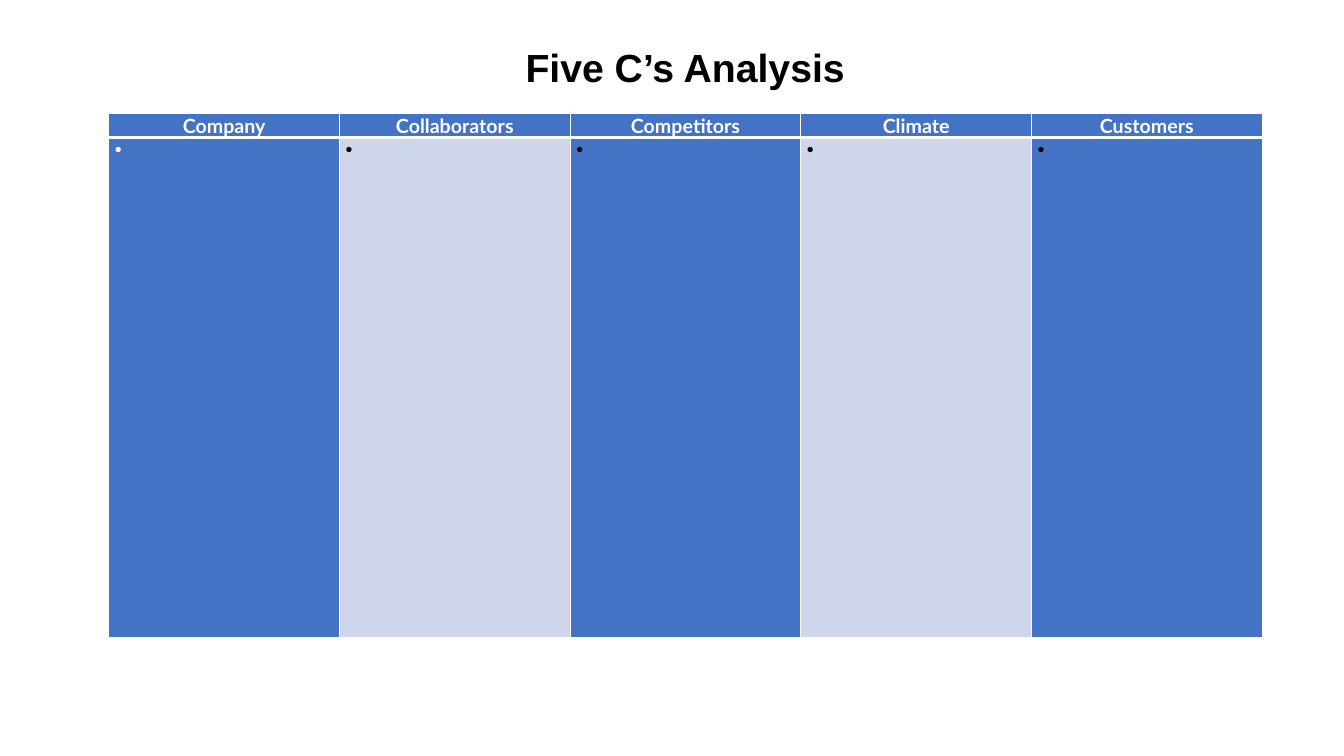
import dataclasses

import pptx
import pptx.dml.color
import pptx.enum.text
import pptx.oxml
import pptx.oxml.ns
import pptx.util

Inches = pptx.util.Inches


@dataclasses.dataclass(frozen=True)
class Theme:
    """Colours, fonts and type sizes of the slide."""
    blue: str = "4472C4"
    pale: str = "CFD5EA"
    white: str = "FFFFFF"
    black: str = "000000"
    title_font: str = "Arial"
    table_font: str = "Lato"
    title_size: int = 28
    table_size: int = 14


THEME = Theme()
HEADINGS = ["Company", "Collaborators", "Competitors", "Climate", "Customers"]


def make_element(markup):
    """Parse drawing markup with the a: namespace declared on its root."""
    tag, rest = markup.split(" ", 1)
    return pptx.oxml.parse_xml(f"{tag} {pptx.oxml.ns.nsdecls('a')} {rest}")


def write_text(para, text, *, font, size, color, bold=False, align=None, before=None):
    """Write one formatted span into a paragraph."""
    para.alignment = align
    if before is not None:
        para.space_before = pptx.util.Pt(before)
    span = para.add_run()
    span.text = text
    span.font.name = font
    span.font.size = pptx.util.Pt(size)
    span.font.bold = bold
    span.font.color.rgb = pptx.dml.color.RGBColor.from_string(color)


def add_bullet(para):
    """Give a paragraph a round bullet with a hanging indent."""
    properties = para._p.get_or_add_pPr()
    properties.set("marL", str(Inches(0.19)))
    properties.set("indent", str(Inches(-0.19)))
    properties.append(make_element('<a:buFont typeface="Arial"/>'))
    properties.append(make_element('<a:buChar char="•"/>'))


def style_cell(cell, fill, top, bottom):
    """Set the margins, fill and white borders of a cell."""
    cell.margin_left = cell.margin_right = Inches(0.06)
    cell.margin_top = cell.margin_bottom = 0
    cell.fill.solid()
    cell.fill.fore_color.rgb = pptx.dml.color.RGBColor.from_string(fill)
    properties = cell._tc.get_or_add_tcPr()
    widths = {"lnL": 1, "lnR": 1, "lnT": top, "lnB": bottom}
    for index, (side, width) in enumerate(widths.items()):
        properties.insert(index, make_element(
            f'<a:{side} w="{pptx.util.Pt(width)}"><a:solidFill>'
            f'<a:srgbClr val="{THEME.white}"/></a:solidFill></a:{side}>'))


def add_title(page, text):
    """Add the centred slide title."""
    box = page.shapes.add_textbox(Inches(2.27), Inches(0.38), Inches(9.05), Inches(0.57))
    box.text_frame.word_wrap = True
    write_text(box.text_frame.paragraphs[0], text, font=THEME.title_font,
               size=THEME.title_size, color=THEME.black, bold=True,
               align=pptx.enum.text.PP_ALIGN.CENTER)


def add_analysis_table(page, headings):
    """Add a table with one headed, bulleted column per heading."""
    table = page.shapes.add_table(2, len(headings), Inches(1.08), Inches(1.13),
                                  Inches(11.44), Inches(5.19)).table
    table.rows[0].height = Inches(0.23)
    table.rows[1].height = Inches(4.96)
    for index, heading in enumerate(headings):
        header, body = table.cell(0, index), table.cell(1, index)
        style_cell(header, THEME.blue, top=1, bottom=3)
        write_text(header.text_frame.paragraphs[0], heading, font=THEME.table_font,
                   size=THEME.table_size, color=THEME.white, bold=True,
                   align=pptx.enum.text.PP_ALIGN.CENTER, before=12)
        style_cell(body, THEME.pale if index % 2 else THEME.blue, top=3, bottom=1)
        entry = body.text_frame.paragraphs[0]
        write_text(entry, " ", font=THEME.table_font, size=THEME.table_size,
                   color=THEME.black if index else THEME.white)
        add_bullet(entry)


def main():
    """Build the slide and save the deck."""
    deck = pptx.Presentation()
    deck.slide_width, deck.slide_height = Inches(13.33), Inches(7.5)
    page = deck.slides.add_slide(deck.slide_layouts[6])
    add_title(page, "Five C’s Analysis")
    add_analysis_table(page, HEADINGS)
    deck.save("out.pptx")


if __name__ == "__main__":
    main()
